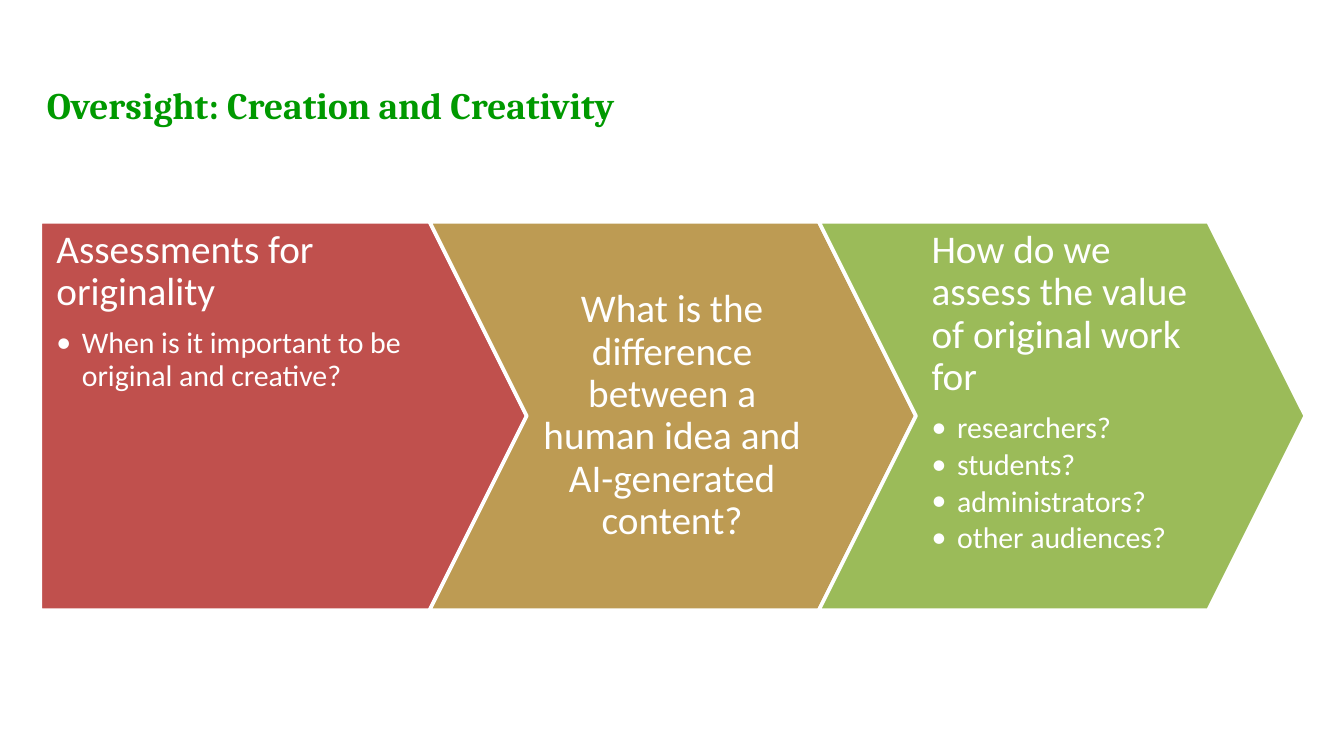
from lxml import etree
from pptx import Presentation
from pptx.dml.color import RGBColor
from pptx.enum.shapes import MSO_SHAPE
from pptx.enum.text import MSO_ANCHOR, PP_ALIGN
from pptx.oxml.ns import qn
from pptx.util import Inches, Pt

PENTAGON, CHEVRON = MSO_SHAPE.PENTAGON, MSO_SHAPE.CHEVRON
TOP, MIDDLE = MSO_ANCHOR.TOP, MSO_ANCHOR.MIDDLE
LEFT, CENTER = PP_ALIGN.LEFT, PP_ALIGN.CENTER
GREEN = RGBColor(0x00, 0x99, 0x00)
WHITE = RGBColor(0xFF, 0xFF, 0xFF)
RED = RGBColor(0xC0, 0x50, 0x4D)
GOLD = RGBColor(0xBD, 0x9B, 0x53)
LIME = RGBColor(0x9B, 0xBB, 0x59)
START, ROW, WIDTH, HEIGHT = 0.3, 1.65, 3.62, 2.89
STEP = WIDTH * 0.8

STAGES = [
    (PENTAGON, RED, 0, 3.26, 0.51, TOP, LEFT, "Assessments for originality",
     ["When is it important to be original and creative?"]),
    (CHEVRON, GOLD, 0.72, 2.17, 0.12, MIDDLE, CENTER,
     "What is the difference between a human idea and AI-generated content?", []),
    (CHEVRON, LIME, 0.72, 2.17, 0.12, TOP, LEFT,
     "How do we assess the value of original work for",
     ["researchers?", "students?", "administrators?", "other audiences?"]),
]


def add_box(slide, left, top, width, height, pads=(0.1, 0.05, 0.1, 0.05), anchor=TOP):
    """Add an empty wrapping text box and return its frame."""
    box = slide.shapes.add_textbox(*map(Inches, (left, top, width, height)))
    frame = box.text_frame
    frame.word_wrap = True
    frame.vertical_anchor = anchor
    (frame.margin_left, frame.margin_top,
     frame.margin_right, frame.margin_bottom) = map(Inches, pads)
    return frame


def write(frame, text, size=21, font="Calibri", color=WHITE, bold=False,
          align=LEFT, lines=0.9, after=7.35, bullet=False):
    """Write one paragraph, filling the first one if it is empty."""
    para = frame.paragraphs[0]
    if para.runs:
        para = frame.add_paragraph()
    para.alignment = align
    para.line_spacing = lines
    para.space_after = Pt(after)
    if bullet:
        props = para._p.get_or_add_pPr()
        props.set("marL", str(Inches(0.19)))
        props.set("indent", str(Inches(-0.19)))
        etree.SubElement(props, qn("a:buFont")).set("typeface", font)
        etree.SubElement(props, qn("a:buChar")).set("char", "•")
    run = para.add_run()
    run.text = text
    run.font.size = Pt(size)
    run.font.name = font
    run.font.bold = bold
    run.font.color.rgb = color


def add_arrow(slide, kind, left, color):
    """Add one block arrow of the process."""
    arrow = slide.shapes.add_shape(kind, *map(Inches, (left, ROW, WIDTH, HEIGHT)))
    arrow.shadow.inherit = False
    arrow.adjustments[0] = 0.25
    arrow.fill.solid()
    arrow.fill.fore_color.rgb = color
    arrow.line.color.rgb = WHITE
    arrow.line.width = Pt(2)


def add_stage(slide, left, kind, color, shift, width, pad, anchor, align, head, items):
    """Add an arrow with its heading and bullets."""
    add_arrow(slide, kind, left, color)
    frame = add_box(slide, left + shift, ROW, width, HEIGHT,
                    (0.12, 0.06, pad, 0.06), anchor)
    write(frame, head, align=align)
    for item in items:
        write(frame, item, size=16, after=2.4, bullet=True)


def main():
    """Build the slide and save it."""
    deck = Presentation()
    deck.slide_width = Inches(10)
    deck.slide_height = deck.slide_width * 9 // 16
    slide = deck.slides.add_slide(deck.slide_layouts[6])
    title = add_box(slide, 0.25, 0.56, 7.17, 0.75)
    write(title, "Oversight: Creation and Creativity", size=20, font="Cambria",
          color=GREEN, bold=True, lines=1.0, after=0)
    for index, stage in enumerate(STAGES):
        add_stage(slide, START + index * STEP, *stage)
    deck.save("out.pptx")


if __name__ == "__main__":
    main()
